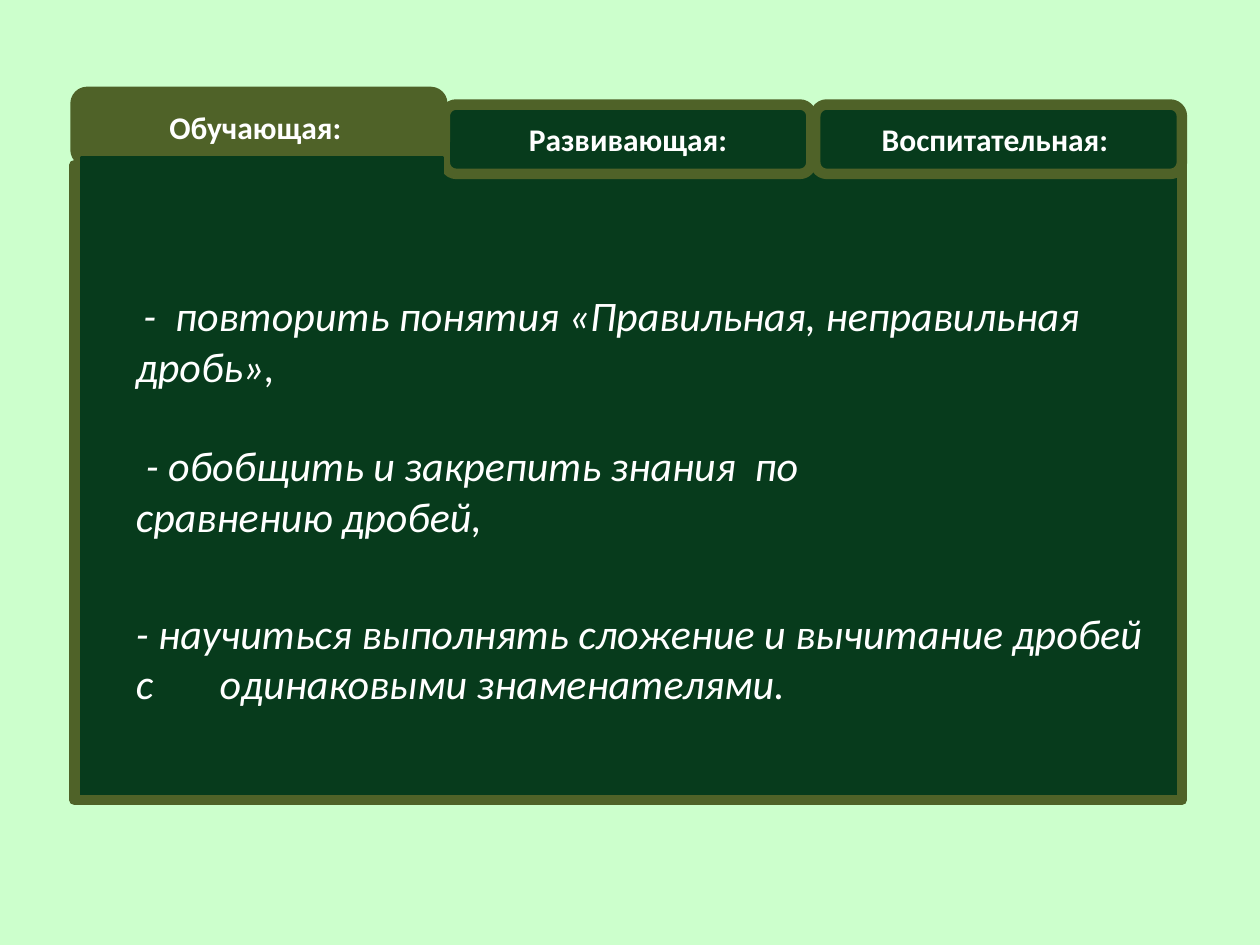
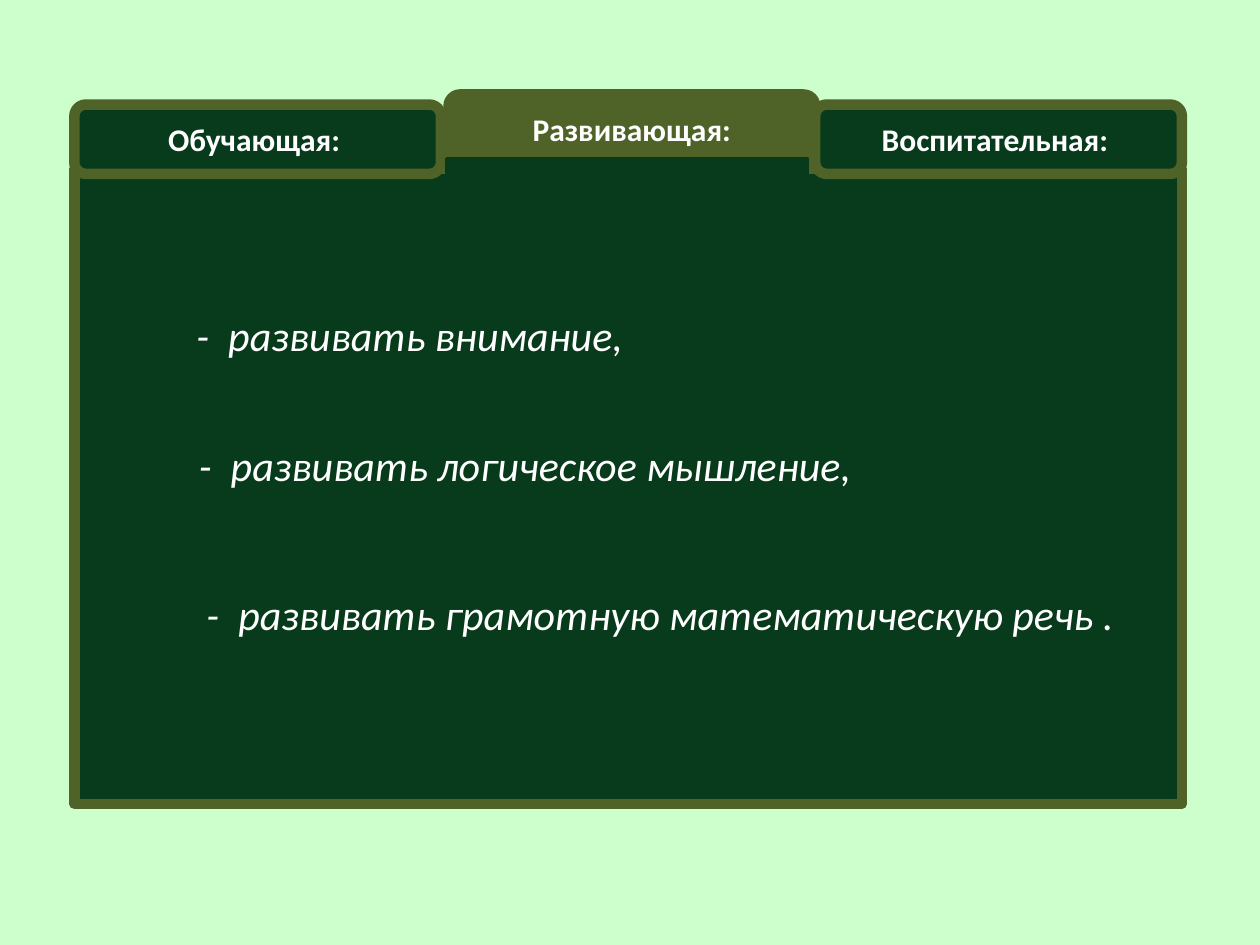
from pptx import Presentation
from pptx.dml.color import RGBColor
from pptx.enum.shapes import MSO_SHAPE as Shape
from pptx.enum.text import MSO_ANCHOR as Anchor, MSO_AUTO_SIZE as AutoSize, PP_ALIGN as Align
from pptx.util import Inches, Pt

# Content
TABS = ["Обучающая: ", "Развивающая:", "Воспитательная: "]

# goals: (text parts set apart by a wide gap, left, top, width, height, first-line indent)
BOARDS = [
    {"active": 0, "active_at": (0.6, 0.73), "panel_top": 1.31, "joint_at": (0.65, 1.25),
     "goals": [
         (["-  повторить понятия «Правильная, неправильная дробь»,"],
          0.98, 2.25, 8.27, 0.91, 0.06),
         (["- обобщить и закрепить знания  по сравнению дробей,"],
          0.98, 3.44, 6.06, 0.91, 0.08),
         (["- научиться выполнять сложение и вычитание дробей с", "одинаковыми знаменателями."],
          0.98, 4.77, 8.27, 0.91, 0)]},
    {"active": 1, "active_at": (3.56, 0.75), "panel_top": 1.34, "joint_at": (3.55, 1.26),
     "goals": [
         (["-  развивать внимание,"], 1.46, 2.41, 4.25, 0.5, 0),
         (["-  развивать логическое мышление,"], 1.48, 3.44, 6.14, 0.5, 0),
         (["-  развивать грамотную математическую речь ."], 1.54, 4.62, 8.03, 0.5, 0)]},
]

# Shared look
FONT = "Calibri"
PAGE, BOARD, FRAME, CHALK = "CCFFCC", "073B1C", "4F6228", "FFFFFF"
LEFT, TAB_TOP, TAB_STEP = 0.59, 0.83, 2.94
TAB_SIZE, PANEL_SIZE, JOINT_SIZE = (2.91, 0.55), (8.79, 5.04), (2.86, 0.48)
GAP_SPACING = 3250  # hundredths of a point added to one space


def colour(hex_code):
    return RGBColor.from_string(hex_code)


def style_font(paragraph, size, bold=False, italic=False):
    font = paragraph.font
    font.name, font.size = FONT, Pt(size)
    font.bold, font.italic = bold, italic
    font.color.rgb = colour(CHALK)


def add_block(slide, kind, at, size, fill, line, weight):
    block = slide.shapes.add_shape(kind, *map(Inches, at + size))
    block.shadow.inherit = False
    block.fill.solid()
    block.fill.fore_color.rgb = colour(fill)
    block.line.color.rgb = colour(line)
    block.line.width = Pt(weight)
    return block


def add_tab(slide, label, at, fill):
    tab = add_block(slide, Shape.ROUNDED_RECTANGLE, at, TAB_SIZE, fill, FRAME, 6)
    tab.text_frame.vertical_anchor = Anchor.MIDDLE
    heading = tab.text_frame.paragraphs[0]
    heading.text = label
    heading.alignment = Align.CENTER
    style_font(heading, 18, bold=True)


def add_goal(slide, parts, left, top, width, height, indent):
    frame = slide.shapes.add_textbox(*map(Inches, (left, top, width, height))).text_frame
    frame.word_wrap = True
    frame.auto_size = AutoSize.SHAPE_TO_FIT_TEXT
    goal = frame.paragraphs[0]
    for number, part in enumerate(parts):
        if number:
            gap = goal.add_run()
            gap.text = " "
            gap._r.get_or_add_rPr().set("spc", str(GAP_SPACING))
        goal.add_run().text = part
    properties = goal._p.get_or_add_pPr()
    properties.set("marL", "0")
    properties.set("indent", str(Inches(indent)))
    style_font(goal, 24, italic=True)


def add_board(deck, board):
    slide = deck.slides.add_slide(deck.slide_layouts[6])
    slide.background.fill.solid()
    slide.background.fill.fore_color.rgb = colour(PAGE)

    # Board panel and its tabs
    add_block(slide, Shape.RECTANGLE, (LEFT, board["panel_top"]), PANEL_SIZE, BOARD, FRAME, 6)
    for number, label in enumerate(TABS):
        if number == board["active"]:
            add_tab(slide, label, board["active_at"], FRAME)
        else:
            add_tab(slide, label, (LEFT + number * TAB_STEP, TAB_TOP), BOARD)

    # Joint that opens the active tab into the panel
    add_block(slide, Shape.RECTANGLE, board["joint_at"], JOINT_SIZE, BOARD, BOARD, 2)

    for goal in board["goals"]:
        add_goal(slide, *goal)


def main():
    deck = Presentation()
    deck.slide_width, deck.slide_height = Inches(10), Inches(7.5)
    for board in BOARDS:
        add_board(deck, board)
    deck.save("out.pptx")


if __name__ == "__main__":
    main()
